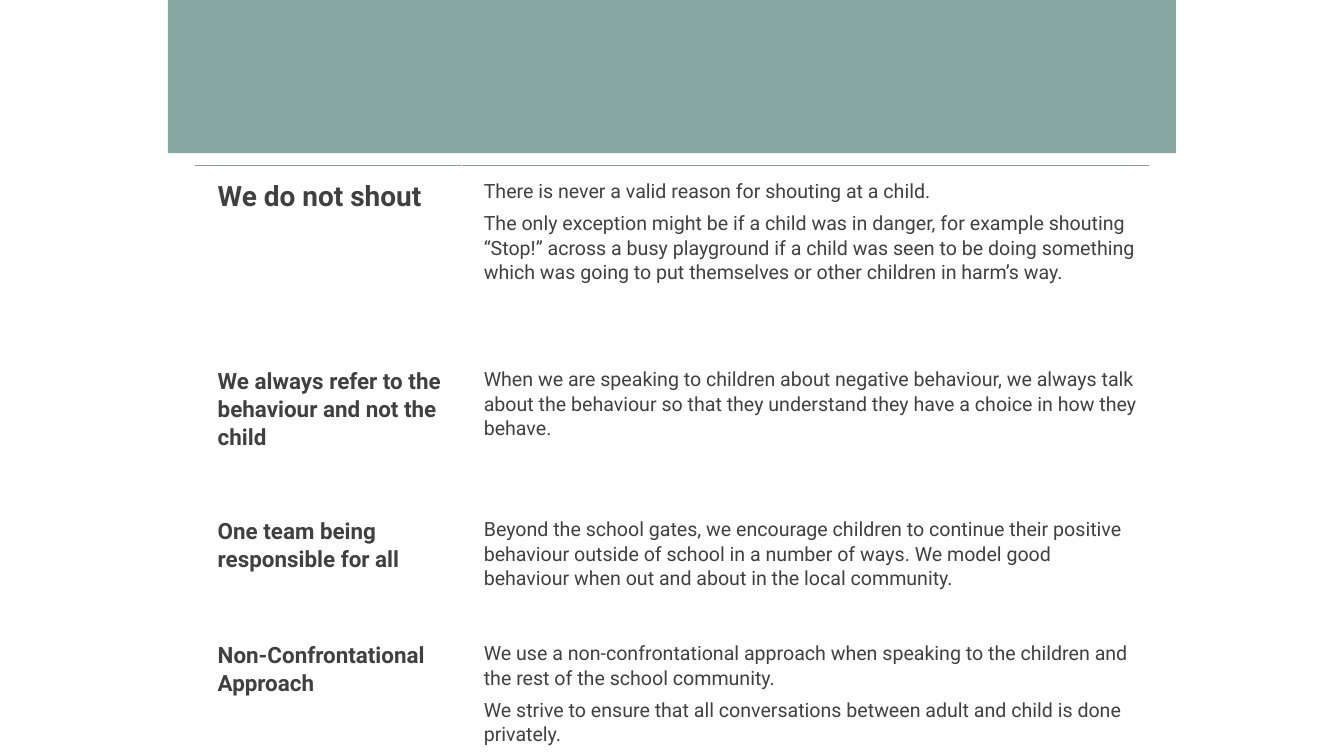
from dataclasses import dataclass

from lxml.etree import SubElement
from pptx import Presentation
from pptx.dml.color import RGBColor
from pptx.enum.shapes import MSO_SHAPE
from pptx.oxml import parse_xml
from pptx.oxml.ns import nsdecls, qn
from pptx.util import Inches, Pt


@dataclass(frozen=True)
class Theme:
    font: str = "Roboto"
    band: str = "6B948C"
    rule: str = "8F9A9D"
    text: str = "404040"
    lead_size: int = 30
    heading_size: int = 24
    body_size: int = 21


theme = Theme()

# Each row: height, inset, heading size, heading, body paragraphs
rows = [
    (2.82, 0.2, theme.lead_size, "We do not shout", [
        "There is never a valid reason for shouting at a child.",
        "The only exception might be if a child was in danger, for example shouting "
        "“Stop!” across a busy playground if a child was seen to be doing something "
        "which was going to put themselves or other children in harm’s way.",
    ]),
    (2.23, 0.18, theme.heading_size, "We always refer to the behaviour and not the child", [
        "When we are speaking to children about negative behaviour, we always talk "
        "about the behaviour so that they understand they have a choice in how they behave.",
    ]),
    (1.85, 0.18, theme.heading_size, "One team being responsible for all", [
        "Beyond the school gates, we encourage children to continue their positive "
        "behaviour outside of school in a number of ways. We model good behaviour "
        "when out and about in the local community.",
    ]),
    (2.23, 0.18, theme.heading_size, "Non-Confrontational Approach", [
        "We use a non-confrontational approach when speaking to the children and "
        "the rest of the school community.",
        "We strive to ensure that all conversations between adult and child is done privately.",
    ]),
]
column_widths = [3.96, 10.24]


def fill_cell(cell, texts, size, bold, inset):
    cell.fill.background()
    cell.margin_left = Inches(0.34)
    cell.margin_top = cell.margin_right = cell.margin_bottom = Inches(inset)
    cell.text = "\n".join(texts)
    for paragraph in cell.text_frame.paragraphs:
        paragraph.line_spacing = 1.07
        paragraph.space_after = Pt(8)
        paragraph.font.name = theme.font
        paragraph.font.size = Pt(size)
        paragraph.font.bold = bold
        paragraph.font.color.rgb = RGBColor.from_string(theme.text)


presentation = Presentation()
presentation.slide_width = Inches(20)
presentation.slide_height = Inches(11.25)
slide = presentation.slides.add_slide(presentation.slide_layouts[6])

# Translucent header band
band = slide.shapes.add_shape(
    MSO_SHAPE.RECTANGLE, Inches(2.5), Inches(0), Inches(15), Inches(2.28))
band.shadow.inherit = False
band.fill.solid()
band.fill.fore_color.rgb = RGBColor.from_string(theme.band)
band.line.fill.background()
band_color = band.fill._xPr.find(qn("a:solidFill"))[0]
SubElement(band_color, qn("a:alpha"), val="80000")

# Table of principles
table = slide.shapes.add_table(
    len(rows), len(column_widths), Inches(2.9), Inches(2.46),
    Inches(sum(column_widths)), Inches(sum(row[0] for row in rows))).table
table.first_row = False
table.horz_banding = False
for column, width in zip(table.columns, column_widths):
    column.width = Inches(width)
for index, (height, inset, heading_size, heading, body) in enumerate(rows):
    table.rows[index].height = Inches(height)
    fill_cell(table.cell(index, 0), [heading], heading_size, True, inset)
    fill_cell(table.cell(index, 1), body, theme.body_size, False, inset)

# Rule along the top of the table
for cell in table.rows[0].cells:
    top_border = parse_xml(
        f'<a:lnT {nsdecls("a")} w="{Pt(1.5)}"><a:solidFill><a:srgbClr val="{theme.rule}">'
        '<a:alpha val="60000"/></a:srgbClr></a:solidFill><a:prstDash val="solid"/></a:lnT>')
    cell._tc.get_or_add_tcPr().insert(0, top_border)

presentation.save("out.pptx")
